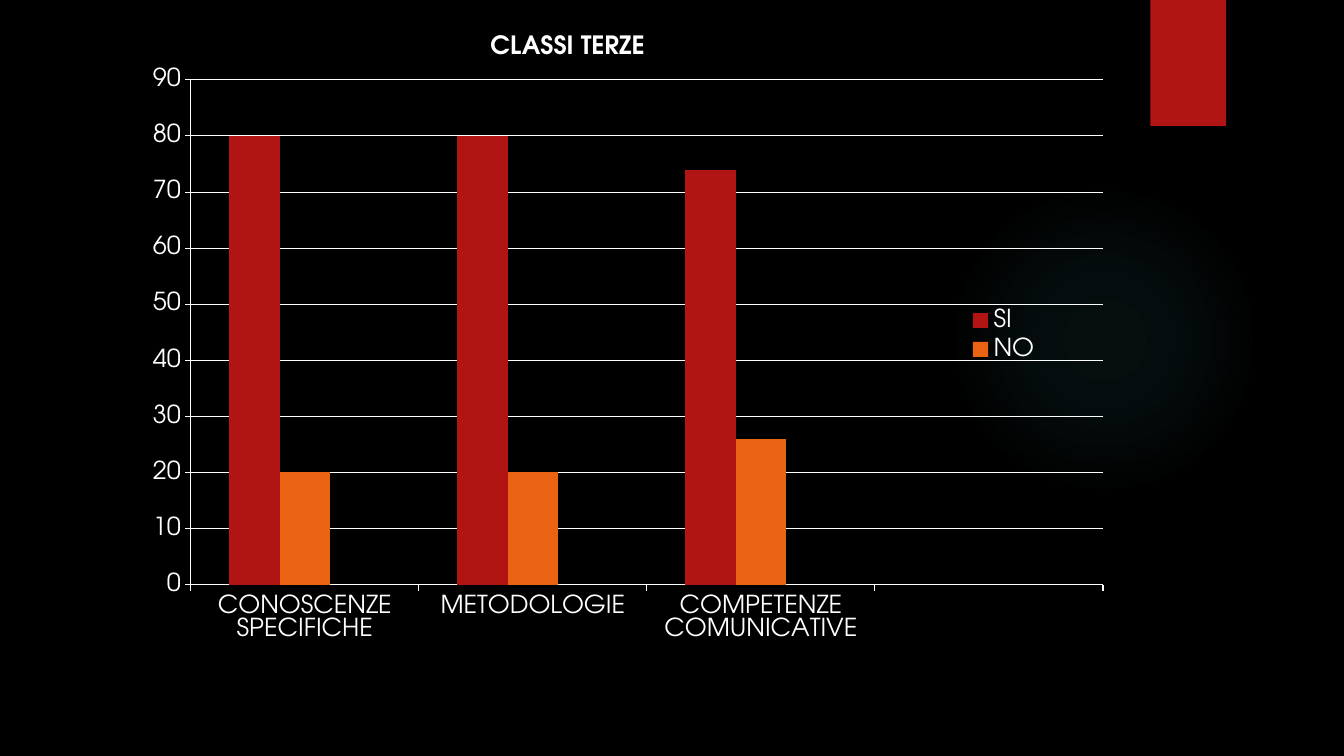
from dataclasses import dataclass
from typing import Optional

from lxml.etree import SubElement
from pptx import Presentation
from pptx.chart.data import CategoryChartData
from pptx.dml.color import RGBColor
from pptx.enum.chart import XL_CHART_TYPE, XL_LEGEND_POSITION, XL_TICK_MARK
from pptx.enum.shapes import MSO_SHAPE
from pptx.enum.text import MSO_ANCHOR, MSO_AUTO_SIZE, PP_ALIGN
from pptx.oxml import parse_xml
from pptx.oxml.ns import nsdecls, qn
from pptx.util import Inches, Pt

FONT = "TeX Gyre Adventor"
SIZE = 18
COLORS = {
    "background": "000000",
    "text": "FFFFFF",
    "glow": "50B9C1",
    "red": "B01513",
    "orange": "EA6312",
    "yellow": "E6B729",
}
CATEGORIES = ["CONOSCENZE SPECIFICHE", "METODOLOGIE", "COMPETENZE COMUNICATIVE", ""]


@dataclass
class Area:
    """Percentages of the slide's width and height."""
    left: float
    top: float
    width: float
    height: float

    def box(self, prs) -> tuple:
        w, h = prs.slide_width, prs.slide_height
        shares = (self.left * w, self.top * h, self.width * w, self.height * h)
        return tuple(round(share / 100) for share in shares)


@dataclass
class Decoration:
    kind: MSO_SHAPE
    area: Area
    color: str
    stops: tuple = ()


@dataclass
class Answer:
    name: str
    values: list[Optional[int]]
    color: str


DECORATIONS = [
    Decoration(MSO_SHAPE.OVAL, Area(70.59, 24.4, 23.11, 41.07), "glow",
               ((0, 7), (36, 6), (69, 0))),
    Decoration(MSO_SHAPE.RECTANGLE, Area(85.6, 0, 5.63, 16.67), "red"),
]
ANSWERS = [
    Answer("SI", [80, 80, 74, None], "red"),
    Answer("NO", [20, 20, 26, None], "orange"),
    Answer("Series 3", [None] * 4, "yellow"),
]
TITLE_AREA = Area(24.08, 3.2, 36.31, 5.33)
CHART_AREA = Area(5.93, 8, 78.02, 76.93)
PLOT_LAYOUT = {"x": 10.6, "y": 3.4, "w": 87, "h": 88.2}
LEGEND_LAYOUT = {"x": 84.4, "y": 42.5}


def rgb(name: str) -> RGBColor:
    return RGBColor.from_string(COLORS[name])


def style_font(font, size: float = SIZE, color: str = "text", bold: bool = False) -> None:
    font.name = FONT
    font.size = Pt(size)
    font.bold = bold
    font.color.rgb = rgb(color)


def write_text(tf, text: str, align=PP_ALIGN.CENTER, **style) -> None:
    p = tf.paragraphs[0]
    p.alignment = align
    r = p.add_run()
    r.text = text
    style_font(r.font, **style)


def radial_fill(sp, color: str, stops: tuple) -> None:
    gs = "".join(
        f'<a:gs pos="{pos * 1000}"><a:srgbClr val="{COLORS[color]}">'
        f'<a:alpha val="{alpha * 1000}"/></a:srgbClr></a:gs>'
        for pos, alpha in stops
    )
    sp._element.spPr.find(qn("a:prstGeom")).addnext(parse_xml(
        f'<a:gradFill {nsdecls("a")} rotWithShape="1"><a:gsLst>{gs}</a:gsLst>'
        '<a:path path="circle"><a:fillToRect l="50000" t="50000" r="50000" b="50000"/>'
        '</a:path></a:gradFill>'
    ))


def draw_decoration(prs, s, item: Decoration) -> None:
    sp = s.shapes.add_shape(item.kind, *item.area.box(prs))
    sp.shadow.inherit = False
    sp.line.fill.background()
    if item.stops:
        radial_fill(sp, item.color, item.stops)
    else:
        sp.fill.solid()
        sp.fill.fore_color.rgb = rgb(item.color)


def set_layout(parent, shares: dict, inner: bool = False) -> None:
    layout = parent.get_or_add_layout() if hasattr(parent, "get_or_add_layout") else None
    if layout is None:
        layout = parent.find(qn("c:layout"))
    if layout is None:
        layout = parse_xml(f'<c:layout {nsdecls("c")}/>')
        parent.insert(0, layout)
    for child in list(layout):
        layout.remove(child)
    manual = SubElement(layout, qn("c:manualLayout"))
    if inner:
        SubElement(manual, qn("c:layoutTarget")).set("val", "inner")
    for key in ("x", "y"):
        SubElement(manual, qn(f"c:{key}Mode")).set("val", "edge")
    for key, share in shares.items():
        SubElement(manual, qn(f"c:{key}")).set("val", str(share / 100))


def style_axis(axis) -> None:
    axis.major_tick_mark = XL_TICK_MARK.OUTSIDE
    axis.minor_tick_mark = XL_TICK_MARK.NONE
    axis.format.line.color.rgb = rgb("text")
    axis.format.line.width = Pt(0.75)
    style_font(axis.tick_labels.font)


def draw_legend(chart) -> None:
    chart.has_legend = True
    legend = chart.legend
    legend.position = XL_LEGEND_POSITION.RIGHT
    legend.include_in_layout = False
    style_font(legend.font)
    set_layout(legend._element, LEGEND_LAYOUT)
    legend._element.find(qn("c:legendPos")).addnext(parse_xml(
        f'<c:legendEntry {nsdecls("c")}><c:idx val="{len(ANSWERS) - 1}"/>'
        '<c:delete val="1"/></c:legendEntry>'
    ))


def draw_chart(prs, s, answers: list[Answer]) -> None:
    data = CategoryChartData(number_format="General")
    data.categories = CATEGORIES
    for answer in answers:
        data.add_series(answer.name, answer.values)
    chart = s.shapes.add_chart(
        XL_CHART_TYPE.COLUMN_CLUSTERED, *CHART_AREA.box(prs), data).chart
    chart.has_title = False
    style_font(chart.font)
    plot = chart.plots[0]
    plot.gap_width = 150
    plot.overlap = 0
    plot.vary_by_categories = False
    for series, answer in zip(plot.series, answers):
        series.format.fill.solid()
        series.format.fill.fore_color.rgb = rgb(answer.color)
    for axis in (chart.category_axis, chart.value_axis):
        style_axis(axis)
    value_axis = chart.value_axis
    value_axis.minimum_scale, value_axis.maximum_scale = 0, 90
    value_axis.major_unit = 10
    value_axis.has_major_gridlines = True
    grid = value_axis.major_gridlines.format.line
    grid.color.rgb = rgb("text")
    grid.width = Pt(0.75)
    set_layout(chart._chartSpace.chart.plotArea, PLOT_LAYOUT, inner=True)
    draw_legend(chart)


def draw_title(prs, s, text: str) -> None:
    title = s.shapes.title
    title.left, title.top, title.width, title.height = TITLE_AREA.box(prs)
    tf = title.text_frame
    tf.word_wrap = True
    tf.auto_size = MSO_AUTO_SIZE.SHAPE_TO_FIT_TEXT
    tf.vertical_anchor = MSO_ANCHOR.TOP
    write_text(tf, text, bold=True)


def main() -> None:
    prs = Presentation()
    prs.slide_width, prs.slide_height = Inches(13.33), Inches(7.5)
    s = prs.slides.add_slide(prs.slide_layouts[5])
    s.background.fill.solid()
    s.background.fill.fore_color.rgb = rgb("background")
    for item in DECORATIONS:
        draw_decoration(prs, s, item)
    draw_chart(prs, s, ANSWERS)
    draw_title(prs, s, "CLASSI TERZE")
    prs.save("out.pptx")


if __name__ == "__main__":
    main()
